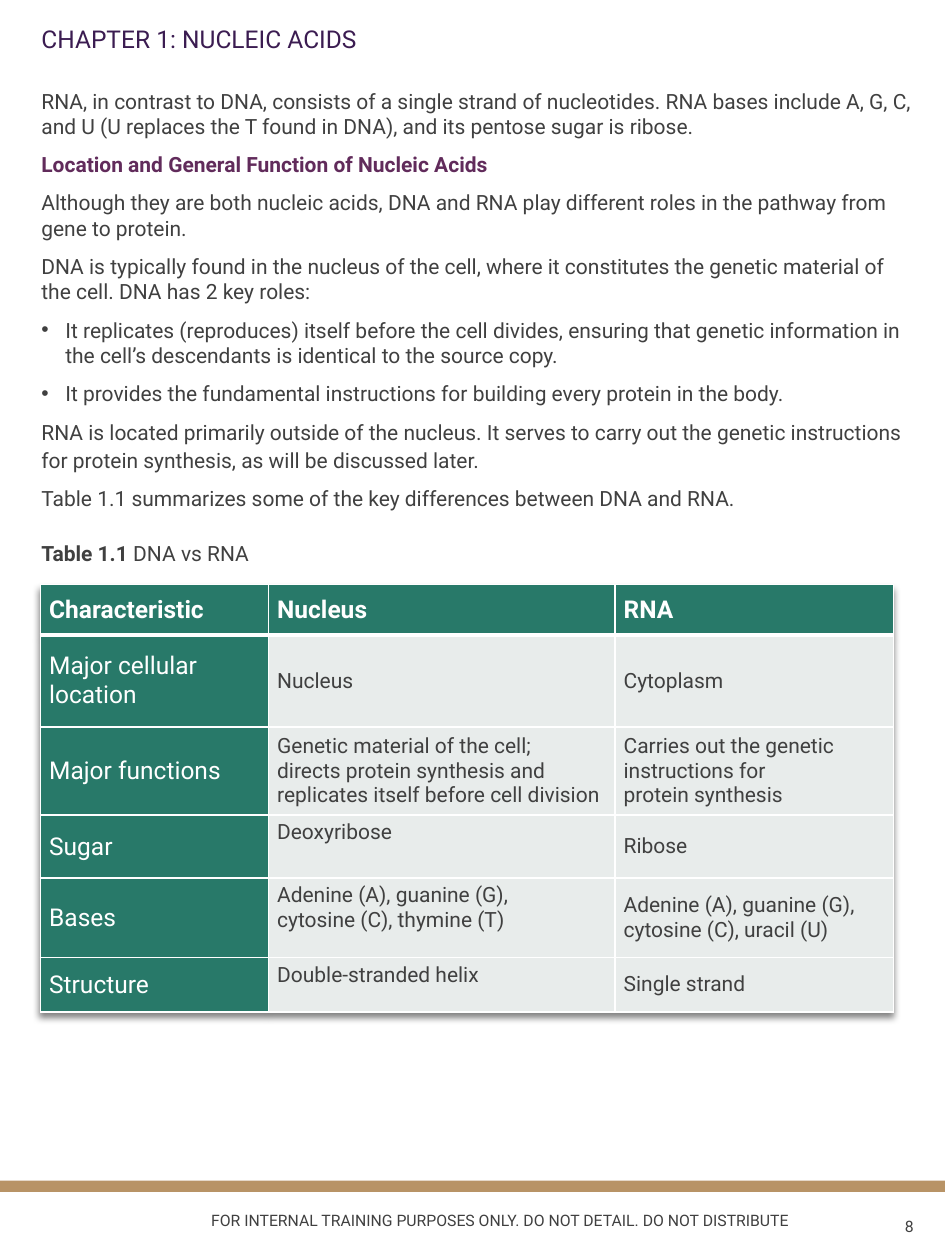
from lxml.etree import SubElement, fromstring
from pptx import Presentation
from pptx.dml.color import RGBColor
from pptx.enum.shapes import MSO_SHAPE
from pptx.enum.text import MSO_ANCHOR, PP_ALIGN
from pptx.oxml.ns import nsdecls, qn
from pptx.util import Inches, Pt

GREEN, GREY, PALE, WHITE = "287969", "404040", "E8ECEB", "FFFFFF"
GOLD, PLUM, PURPLE = "B89366", "612B5B", "3B1C51"


def color(code):
    return RGBColor.from_string(code)


def write(para, text, size=12, ink=GREY, bold=False, before=0, line=None,
          align=None, bullet=False):
    """Add a run of text to a paragraph; a newline is a line break."""
    if bullet:
        props = para._p.get_or_add_pPr()
        props.set("marL", str(Inches(0.19)))
        props.set("indent", str(-Inches(0.19)))
        SubElement(props, qn("a:buFont")).set("typeface", "Arial")
        SubElement(props, qn("a:buChar")).set("char", "•")
    if before:
        para.space_before = Pt(before)
    if line:
        para.line_spacing = line
    if align is not None:
        para.alignment = align
    for num, part in enumerate(text.split("\n")):
        if num:
            para.add_line_break()
        run = para.add_run()
        run.text = part
        font = run.font
        font.name, font.size, font.bold = "Roboto", Pt(size), bold
        font.color.rgb = color(ink)


class Page:
    def __init__(self, deck):
        self.slide = deck.slides.add_slide(deck.slide_layouts[6])
        self.shapes = self.slide.shapes

    def bar(self, x, y, w, h, fill):
        bar = self.shapes.add_shape(MSO_SHAPE.RECTANGLE, Inches(x), Inches(y),
                                    Inches(w), Inches(h))
        bar.shadow.inherit = False
        bar.fill.solid()
        bar.fill.fore_color.rgb = color(fill)
        bar.line.fill.background()

    def text(self, x, y, w, h, paras, anchor=MSO_ANCHOR.MIDDLE):
        """Each paragraph is a list of (text, format) runs."""
        box = self.shapes.add_textbox(Inches(x), Inches(y), Inches(w), Inches(h))
        frame = box.text_frame
        frame.word_wrap = True
        frame.vertical_anchor = anchor
        for num, runs in enumerate(paras):
            para = frame.add_paragraph() if num else frame.paragraphs[0]
            for words, form in runs:
                write(para, words, **form)

    def cell(self, cell, text, fill, top=False, rule=1, **form):
        cell.margin_left = cell.margin_right = Inches(0.07)
        cell.margin_top = Inches(0.04 if top else 0)
        cell.margin_bottom = 0
        cell.vertical_anchor = MSO_ANCHOR.TOP if top else MSO_ANCHOR.MIDDLE
        cell.fill.solid()
        cell.fill.fore_color.rgb = color(fill)
        props = cell._tc.get_or_add_tcPr()
        for num, side in enumerate("LRTB"):
            width = Pt(rule if side == "B" else 1)
            props.insert(num, fromstring(
                f'<a:ln{side} {nsdecls("a")} w="{width}"><a:solidFill>'
                f'<a:srgbClr val="{WHITE}"/></a:solidFill></a:ln{side}>'))
        write(cell.text_frame.paragraphs[0], text, **form)

    def table(self, x, y, cols, rows, data, raised):
        frame = self.shapes.add_table(len(rows), len(cols), Inches(x), Inches(y),
                                      Inches(sum(cols)), Inches(sum(rows)))
        table = frame.table
        table.horz_banding = False
        table._tbl.tblPr.insert(0, fromstring(
            f'<a:effectLst {nsdecls("a")}><a:outerShdw blurRad="50800" '
            'dist="38100" dir="6000000" algn="t" rotWithShape="0">'
            '<a:srgbClr val="000000"><a:alpha val="50000"/></a:srgbClr>'
            '</a:outerShdw></a:effectLst>'))
        for col, width in zip(table.columns, cols):
            col.width = Inches(width)
        for row, height in zip(table.rows, rows):
            row.height = Inches(height)
        for r, line in enumerate(data):
            for c, words in enumerate(line):
                head = r == 0 or c == 0
                self.cell(table.cell(r, c), words, GREEN if head else PALE,
                          top=(r, c) in raised, rule=1 if r else 3,
                          size=14 if head else 12,
                          ink=WHITE if head else GREY, bold=r == 0)


def main():
    deck = Presentation()
    deck.slide_width, deck.slide_height = Inches(7.5), Inches(10)
    page = Page(deck)

    # Footer band and title
    page.bar(0, 9.37, 7.5, 0.09, GOLD)
    page.text(0.23, 0.07, 5.64, 0.5, [[
        ("CHAPTER 1: NUCLEIC ACIDS", dict(size=14, ink=PURPLE, line=0.9))]])

    # Body text
    gap, tight = dict(before=7.5), dict(before=6, line=Pt(16))
    body = [
        ("RNA, in contrast to DNA, consists of a single strand of nucleotides. "
         "RNA bases include A, G, C, and U (U replaces the T found in DNA), "
         "and its pentose sugar is ribose.", {}),
        ("Location and General Function of Nucleic Acids",
         dict(gap, ink=PLUM, bold=True)),
        ("Although they are both nucleic acids, DNA and RNA play different "
         "roles in the pathway from gene to protein.", gap),
        ("DNA is typically found in the nucleus of the cell, where it "
         "constitutes the genetic material of the cell. DNA has 2 key roles:",
         gap),
        ("It replicates (reproduces) itself before the cell divides, ensuring "
         "that genetic information in the cell’s descendants is identical to "
         "the source copy.", dict(gap, bullet=True)),
        ("It provides the fundamental instructions for building every protein "
         "in the body.", dict(gap, bullet=True)),
        ("RNA is located primarily outside of the nucleus. It serves to carry "
         "out the genetic instructions for protein synthesis, as will be "
         "discussed later.", tight),
        ("Table 1.1 summarizes some of the key differences between DNA and "
         "RNA.", tight),
    ]
    page.text(0.23, 0.65, 7.12, 8.54, [[item] for item in body],
              anchor=MSO_ANCHOR.TOP)

    # Table with its caption
    page.text(0.23, 4.24, 6.77, 0.3, [[
        ("Table 1.1 ", dict(bold=True)), ("DNA vs RNA", {})]])
    page.table(0.32, 4.64, [1.81, 2.75, 2.21],
               [0.4, 0.73, 0.7, 0.5, 0.63, 0.43], [
        ("Characteristic", "Nucleus", "RNA"),
        ("Major cellular location", "Nucleus", "Cytoplasm"),
        ("Major functions",
         "Genetic material of the cell;\ndirects protein synthesis and "
         "replicates itself before cell division",
         "Carries out the genetic instructions for\nprotein synthesis"),
        ("Sugar", "Deoxyribose", "Ribose"),
        ("Bases", "Adenine (A), guanine (G),\ncytosine (C), thymine (T)",
         "Adenine (A), guanine (G), cytosine (C), uracil (U)"),
        ("Structure", "Double-stranded helix", "Single strand"),
    ], raised={(3, 1), (4, 1), (5, 1)})

    # Footer text and page number
    page.text(6.78, 9.55, 0.57, 0.37,
              [[("8", dict(size=9, align=PP_ALIGN.RIGHT))]])
    page.text(1.29, 9.56, 5.35, 0.36, [[
        ("FOR INTERNAL TRAINING PURPOSES ONLY. DO NOT DETAIL. "
         "DO NOT DISTRIBUTE", dict(size=9, align=PP_ALIGN.CENTER))]],
        anchor=MSO_ANCHOR.TOP)

    deck.save("out.pptx")


if __name__ == "__main__":
    main()
